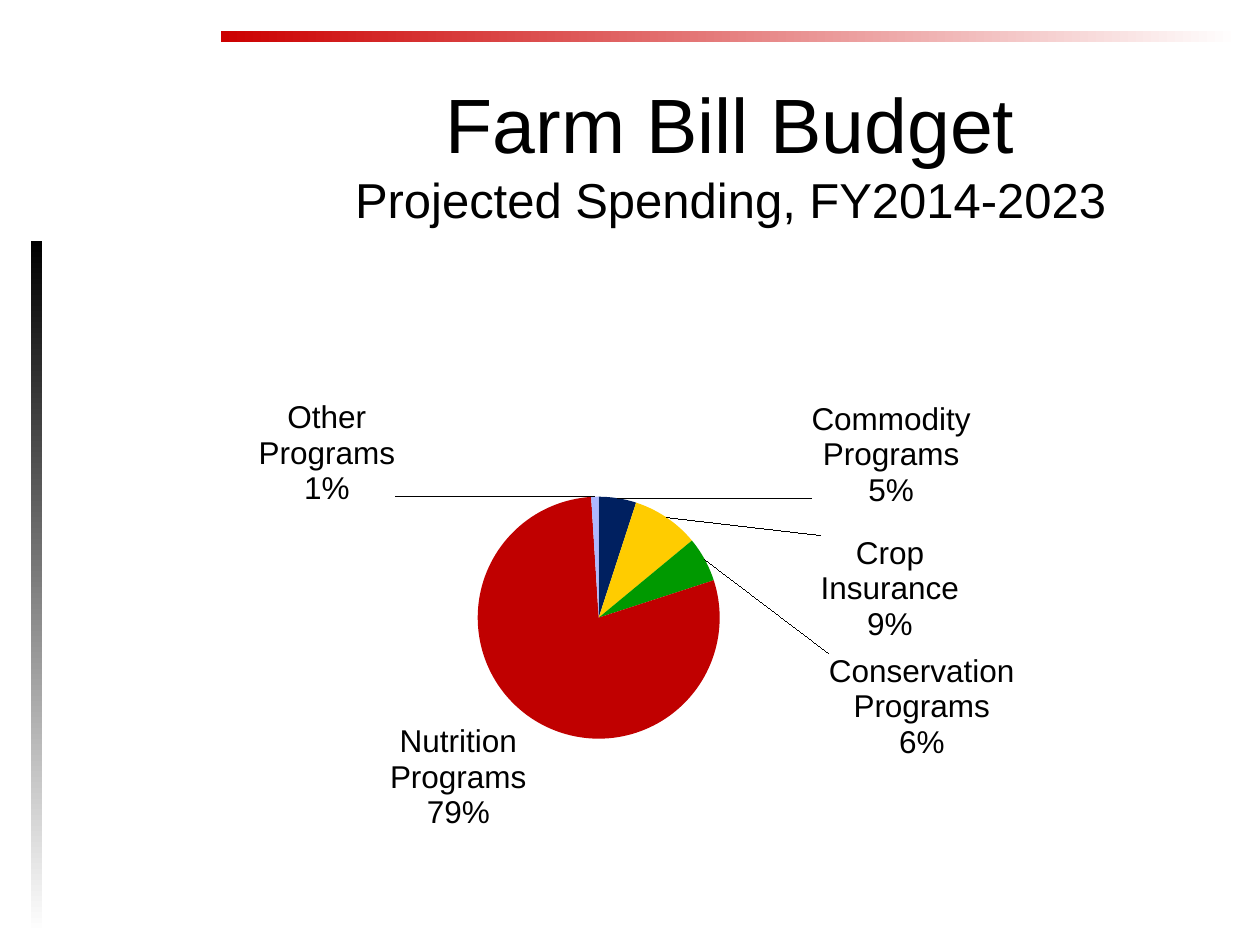
from copy import deepcopy
from dataclasses import dataclass

from lxml import etree
from pptx import Presentation
from pptx.chart.data import CategoryChartData
from pptx.dml.color import RGBColor
from pptx.enum.chart import XL_CHART_TYPE, XL_LABEL_POSITION
from pptx.enum.shapes import MSO_SHAPE
from pptx.enum.text import MSO_ANCHOR, PP_ALIGN
from pptx.oxml.ns import qn
from pptx.util import Pt

PIE = XL_CHART_TYPE.PIE
OUTSIDE_END = XL_LABEL_POSITION.OUTSIDE_END
RECTANGLE = MSO_SHAPE.RECTANGLE
MIDDLE = MSO_ANCHOR.MIDDLE
CENTER = PP_ALIGN.CENTER

PX_PER_INCH = 126
FONT = "Arial"
BLACK, WHITE = "000000", "FFFFFF"


@dataclass
class Box:
    left: int
    top: int
    width: int
    height: int

    def emu(self):
        return [px(n) for n in (self.left, self.top, self.width, self.height)]


@dataclass
class FadingBar:
    box: Box
    color: str
    angle: int  # counter-clockwise degrees


@dataclass
class Slice:
    name: str
    percent: int
    color: str
    label_shift: tuple[float, float] | None  # share of chart width and height


PAGE = Box(0, 0, 1260, 945)
TITLE_BOX = Box(242, 42, 977, 221)
CHART_BOX = Box(105, 283, 1071, 567)
PIE_BOX = Box(478, 497, 242, 242)

BARS = [
    FadingBar(Box(221, 31, 1018, 11), "CC0000", 0),
    FadingBar(Box(31, 241, 11, 693), BLACK, 270),
]
TITLE_LINES = [("Farm Bill Budget", 44), ("Projected Spending, FY2014-2023", 28)]
SLICES = [
    Slice("Commodity Programs", 5, "002060", (0.18, 0.03)),
    Slice("Crop Insurance", 9, "FFCC00", (0.14, 0.23)),
    Slice("Conservation Programs", 6, "009900", (0.11, 0.36)),
    Slice("Nutrition Programs", 79, "C00000", None),
    Slice("Other Programs", 1, "ADB8FF", (-0.25, 0.03)),
]


def px(length: int) -> int:
    return round(length * 914400 / PX_PER_INCH)


def rgb(color: str) -> RGBColor:
    return RGBColor.from_string(color)


def set_font(font, size: int) -> None:
    font.name = FONT
    font.size = Pt(size)
    font.color.rgb = rgb(BLACK)


def draw_bar(page, bar: FadingBar) -> None:
    shape = page.shapes.add_shape(RECTANGLE, *bar.box.emu())
    shape.shadow.inherit = False
    shape.line.fill.background()
    shape.fill.gradient()
    shape.fill.gradient_angle = bar.angle
    for stop, color, position in zip(shape.fill.gradient_stops, (bar.color, WHITE), (0, 1)):
        stop.color.rgb = rgb(color)
        stop.position = position


def draw_title(page) -> None:
    frame = page.shapes.add_textbox(*TITLE_BOX.emu()).text_frame
    frame.word_wrap = True
    frame.vertical_anchor = MIDDLE
    para = frame.paragraphs[0]
    para.alignment = CENTER
    for index, (text, size) in enumerate(TITLE_LINES):
        if index:
            para.add_line_break()
        span = para.add_run()
        span.text = text
        set_font(span.font, size)


def manual_layout(**values):
    """Return a c:layout element holding the given settings in order."""
    layout = etree.Element(qn("c:layout"))
    manual = etree.SubElement(layout, qn("c:manualLayout"))
    for name, value in values.items():
        etree.SubElement(manual, qn(f"c:{name}")).set("val", str(value))
    return layout


def place_pie(chart) -> None:
    plot_area = chart.plots[0].series[0].format and chart._chartSpace.chart.plotArea
    for old in plot_area.findall(qn("c:layout")):
        plot_area.remove(old)
    plot_area.insert(0, manual_layout(
        layoutTarget="inner", xMode="edge", yMode="edge",
        x=round((PIE_BOX.left - CHART_BOX.left) / CHART_BOX.width, 3),
        y=round((PIE_BOX.top - CHART_BOX.top) / CHART_BOX.height, 3),
        w=round(PIE_BOX.width / CHART_BOX.width, 3),
        h=round(PIE_BOX.height / CHART_BOX.height, 3),
    ))


def add_labels(series) -> None:
    labels = series.data_labels
    labels.show_value = False
    labels.show_category_name = True
    labels.show_percentage = True
    labels.position = OUTSIDE_END
    set_font(labels.font, 18)

    group = labels._element
    separator = etree.Element(qn("c:separator"))
    separator.text = "\n"
    group.find(qn("c:showBubbleSize")).addnext(separator)
    leader = group.find(qn("c:showLeaderLines"))
    if leader is None:
        leader = etree.SubElement(group, qn("c:showLeaderLines"))
    leader.set("val", "1")

    shared = [child for child in group if child is not leader]
    shifted = [(i, s.label_shift) for i, s in enumerate(SLICES) if s.label_shift]
    for place, (index, (x, y)) in enumerate(shifted):
        label = etree.Element(qn("c:dLbl"))
        etree.SubElement(label, qn("c:idx")).set("val", str(index))
        label.append(manual_layout(x=x, y=y))
        label.extend(deepcopy(shared))
        group.insert(place, label)


def draw_chart(page) -> None:
    chart_data = CategoryChartData()
    chart_data.categories = [part.name for part in SLICES]
    chart_data.add_series("Series 1", [part.percent for part in SLICES])
    chart = page.shapes.add_chart(PIE, *CHART_BOX.emu(), chart_data).chart
    chart.has_title = False
    chart.has_legend = False
    set_font(chart.font, 18)
    series = chart.plots[0].series[0]
    for index, part in enumerate(SLICES):
        fill = series.points[index].format.fill
        fill.solid()
        fill.fore_color.rgb = rgb(part.color)
    place_pie(chart)
    add_labels(series)


def main() -> None:
    deck = Presentation()
    deck.slide_width, deck.slide_height = px(PAGE.width), px(PAGE.height)
    page = deck.slides.add_slide(deck.slide_layouts[6])
    for bar in BARS:
        draw_bar(page, bar)
    draw_title(page)
    draw_chart(page)
    deck.save("out.pptx")


if __name__ == "__main__":
    main()
